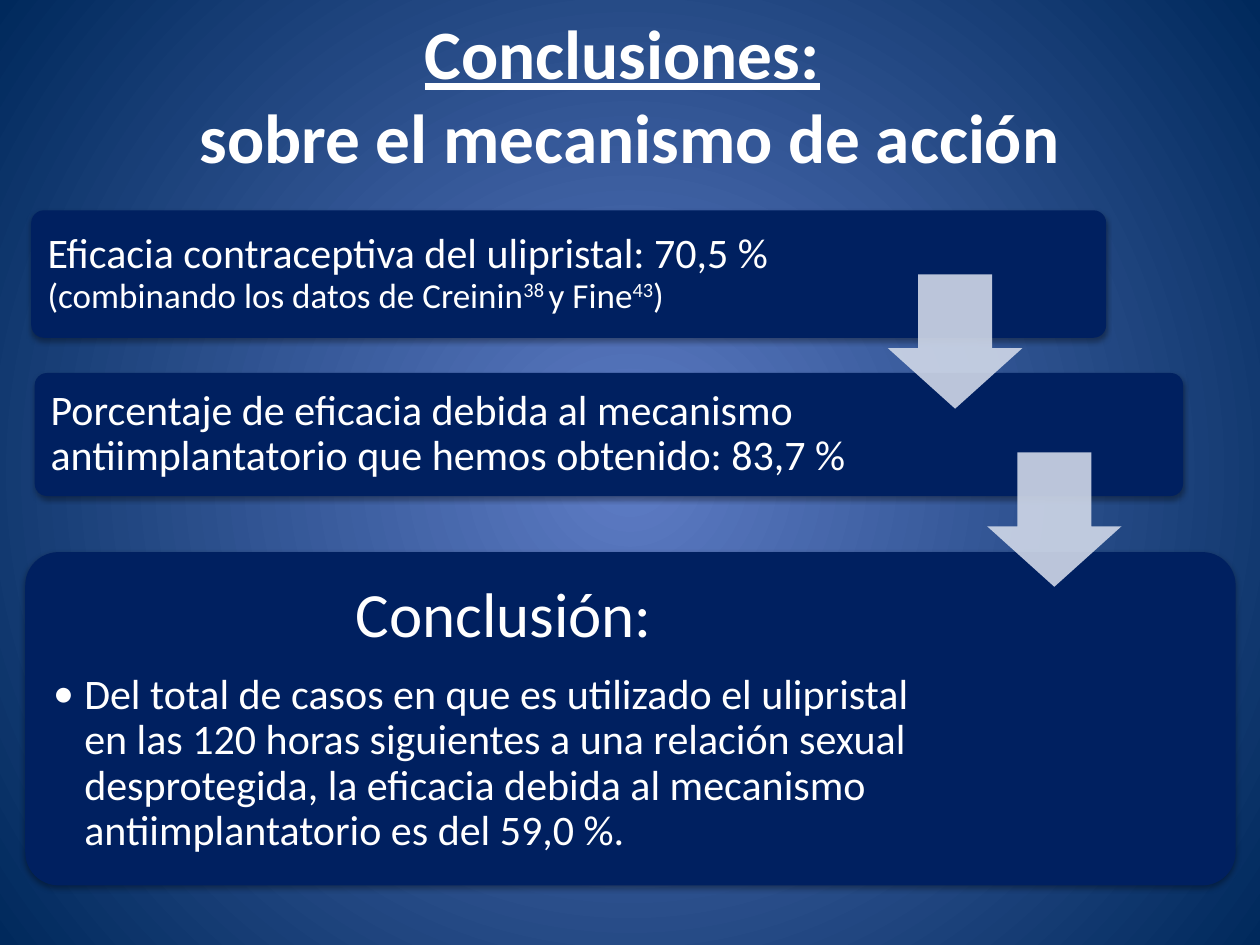
from lxml.etree import SubElement
from pptx import Presentation
from pptx.dml.color import RGBColor
from pptx.enum.shapes import MSO_SHAPE
from pptx.enum.text import MSO_ANCHOR, PP_ALIGN
from pptx.oxml import parse_xml
from pptx.oxml.ns import nsdecls, qn
from pptx.util import Cm, Pt

COLORS = {
    "glow": "5E7CC5",
    "edge": "00295C",
    "panel": "002060",
    "arrow": "D0D8E8",
    "text": "FFFFFF",
    "shadow": "000000",
}
FONT = "Calibri"


class SlideBuilder:
    """Holds the style and the current slide, and draws each kind of element."""

    def __init__(self, page):
        self.page = page

    def background(self):
        """Fill the page with a gradient that spreads from its centre."""
        self.page.element.cSld.insert(0, parse_xml(
            f'<p:bg {nsdecls("p", "a")}><p:bgPr><a:gradFill rotWithShape="1"><a:gsLst>'
            f'<a:gs pos="0"><a:srgbClr val="{COLORS["glow"]}"/></a:gs>'
            f'<a:gs pos="100000"><a:srgbClr val="{COLORS["edge"]}"/></a:gs></a:gsLst>'
            '<a:path path="circle"><a:fillToRect l="50000" t="50000" r="50000" b="50000"/>'
            '</a:path></a:gradFill><a:effectLst/></p:bgPr></p:bg>'))

    def shape(self, kind, place, color, adjustments):
        """Add a filled preset shape without an outline or shadow."""
        shape = self.page.shapes.add_shape(kind, *map(Cm, place))
        shape.fill.solid()
        shape.fill.fore_color.rgb = RGBColor.from_string(COLORS[color])
        shape.line.fill.background()
        shape.shadow.inherit = False
        for index, value in enumerate(adjustments):
            shape.adjustments[index] = value
        return shape

    def panel(self, *place):
        """Add a rounded panel with a soft shadow below it."""
        panel = self.shape(MSO_SHAPE.ROUNDED_RECTANGLE, place, "panel", [0.1])
        effects = panel.element.spPr.find(qn("a:effectLst"))
        effects.append(parse_xml(
            f'<a:outerShdw {nsdecls("a")} blurRad="{Pt(3.1)}" dist="{Pt(1.8)}" '
            f'dir="5400000" rotWithShape="0"><a:srgbClr val="{COLORS["shadow"]}">'
            '<a:alpha val="35000"/></a:srgbClr></a:outerShdw>'))

    def arrow(self, left, top, size=2.71):
        """Add a slightly transparent arrow that points down."""
        arrow = self.shape(MSO_SHAPE.DOWN_ARROW, (left, top, size, size), "arrow", [0.55, 0.45])
        color = arrow.element.spPr.find(qn("a:solidFill"))[0]
        SubElement(color, qn("a:alpha")).set("val", "90000")

    def text_box(self, place, inset):
        """Add an empty, vertically centred text box and return its frame."""
        frame = self.page.shapes.add_textbox(*map(Cm, place)).text_frame
        frame.word_wrap = True
        frame.vertical_anchor = MSO_ANCHOR.MIDDLE
        frame.margin_left = frame.margin_right = Cm(inset)
        frame.margin_top = frame.margin_bottom = Cm(inset)
        return frame

    def span(self, para, text, size, bold=None, underline=None, raised=False):
        """Add one styled run to a paragraph."""
        span = para.add_run()
        span.text = text
        font = span.font
        font.name, font.size, font.bold, font.underline = FONT, Pt(size), bold, underline
        font.color.rgb = RGBColor.from_string(COLORS["text"])
        if raised:
            span._r.get_or_add_rPr().set("baseline", "30000")

    def indent(self, para, left, first=0):
        """Set the left and first-line indents of a paragraph."""
        properties = para._p.get_or_add_pPr()
        properties.set("marL", str(Cm(left)))
        properties.set("indent", str(Cm(first)))
        return properties

    def bullet(self, para, hang):
        """Give a paragraph a hanging bullet."""
        properties = self.indent(para, hang, -hang)
        SubElement(properties, qn("a:buFont")).set("typeface", FONT)
        SubElement(properties, qn("a:buChar")).set("char", "•")


def main():
    """Build and save the slide."""
    deck = Presentation()
    deck.slide_width, deck.slide_height = Cm(25.4), Cm(19.05)
    builder = SlideBuilder(deck.slides.add_slide(deck.slide_layouts[6]))
    builder.background()

    title = builder.text_box((0.85, 0.64, 23.7, 2.5), 0.13).paragraphs[0]
    title.alignment = PP_ALIGN.CENTER
    builder.span(title, "Conclusiones:", 39.6, bold=True, underline=True)
    builder.span(title, " ", 39.6, bold=True)
    title.add_line_break()
    builder.span(title, "sobre el mecanismo de acción", 39.6, bold=True)

    builder.panel(0.63, 4.24, 21.67, 2.57)
    efficacy = builder.text_box((0.71, 4.32, 17.07, 2.41), 0.25).paragraphs[0]
    efficacy.line_spacing = 0.9
    builder.span(efficacy, "Eficacia contraceptiva del ulipristal: 70,5 % ", 24)
    for text, raised in (("(combinando los datos de Creinin", False), ("38 ", True),
                         ("y Fine", False), ("43", True), (")", False)):
        builder.span(efficacy, text, 20, raised=raised)

    builder.panel(0.7, 7.52, 23.15, 2.48)
    share = builder.text_box((0.77, 7.59, 17.93, 2.34), 0.25).paragraphs[0]
    share.line_spacing = 0.9
    builder.span(share, "Porcentaje de eficacia debida al mecanismo antiimplantatorio "
                        "que hemos obtenido: 83,7 %", 24)

    builder.panel(0.51, 11.13, 24.4, 6.72)
    conclusion = builder.text_box((0.69, 11.33, 18.67, 6.32), 0.38)
    heading = conclusion.paragraphs[0]
    heading.line_spacing = 0.9
    heading.space_after = Pt(12.6)
    builder.indent(heading, 6.1)
    builder.span(heading, "Conclusión:", 36)
    body = conclusion.add_paragraph()
    body.line_spacing = 0.9
    body.space_after = Pt(3.6)
    builder.bullet(body, 0.63)
    builder.span(body, "Del total de casos en que es utilizado el ulipristal en las 120 horas "
                       "siguientes a una relación sexual desprotegida, la eficacia debida al "
                       "mecanismo antiimplantatorio es del 59,0 %.", 24)

    builder.arrow(17.9, 5.53)
    builder.arrow(19.9, 9.12)
    deck.save("out.pptx")


if __name__ == "__main__":
    main()
